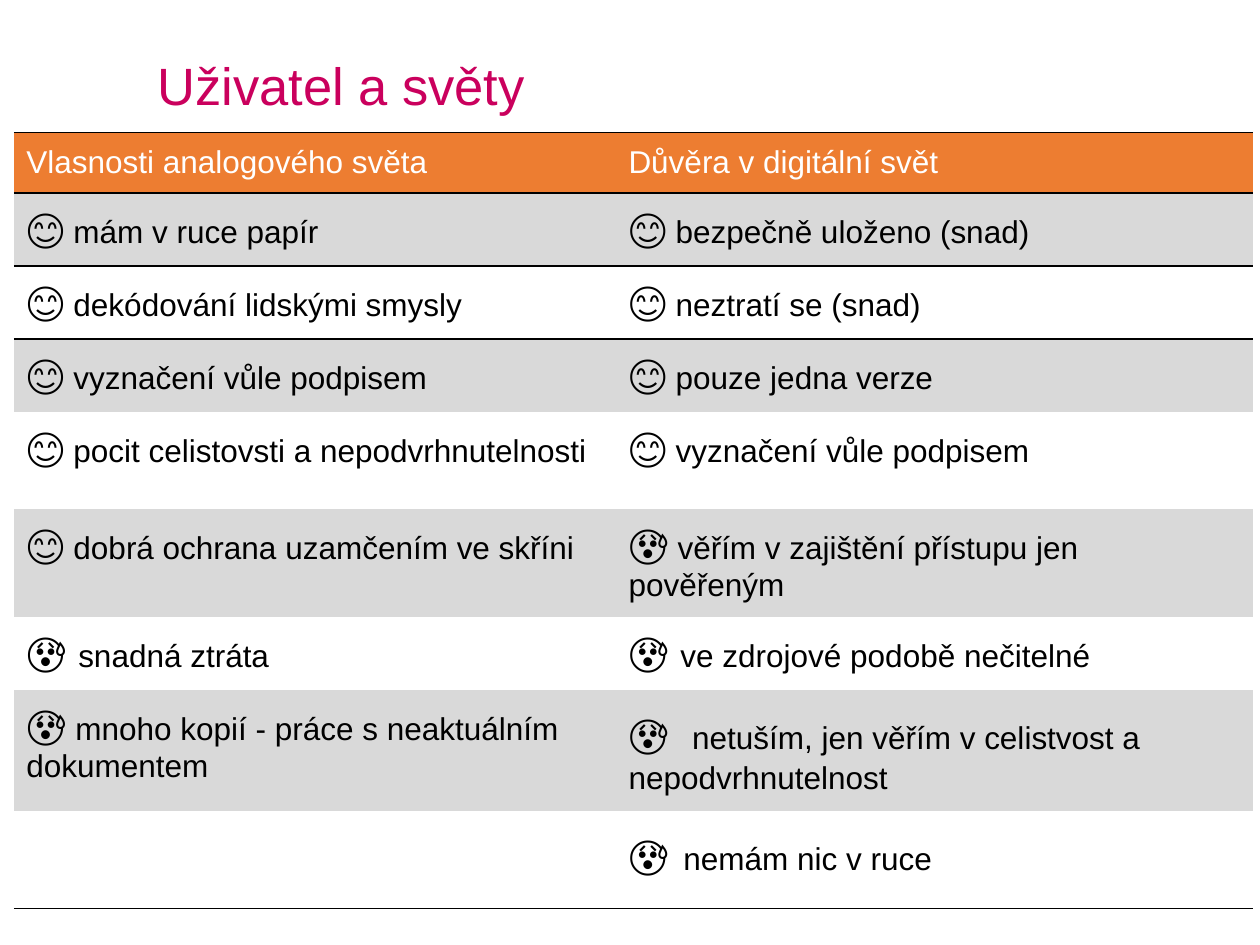
from dataclasses import dataclass
from typing import Optional

import pptx
import pptx.dml.color
import pptx.enum.text
import pptx.oxml
import pptx.oxml.ns
import pptx.util

Cm = pptx.util.Cm
HAPPY, WORRIED = "😊", "😰"
NO_STYLE = "{2D5ABB26-0587-4C30-8999-92F81FD0307C}"


@dataclass(frozen=True)
class Theme:
    """Colours, font and type sizes of the slide."""
    font: str = "Arial"
    title: str = "CA005D"
    header: str = "ED7D31"
    header_text: str = "FFFFFF"
    band: str = "D9D9D9"
    ink: str = "000000"
    title_size: int = 30
    face_size: int = 24
    body_size: int = 18


@dataclass(frozen=True)
class Entry:
    """A face and a statement, parted by spaces of the given sizes."""
    face: str
    text: str
    gaps: tuple[int, ...] = (18,)


@dataclass(frozen=True)
class Row:
    """A table row with its height in centimetres."""
    height: float
    left: Optional[Entry]
    right: Entry


T = Theme()
HEADERS = ("Vlasnosti analogového světa", "Důvěra v digitální svět")
HEADER_HEIGHT = 1.22
COLUMNS = (12.14, 12.83)
ROWS = (
    Row(1.47, Entry(HAPPY, "mám v ruce papír"), Entry(HAPPY, "bezpečně uloženo (snad)")),
    Row(1.47, Entry(HAPPY, "dekódování lidskými smysly"), Entry(HAPPY, "neztratí se (snad)")),
    Row(1.47, Entry(HAPPY, "vyznačení vůle podpisem"), Entry(HAPPY, "pouze jedna verze")),
    Row(1.96, Entry(HAPPY, "pocit celistovsti a nepodvrhnutelnosti"),
        Entry(HAPPY, "vyznačení vůle podpisem")),
    Row(2.18, Entry(HAPPY, "dobrá ochrana uzamčením ve skříni"),
        Entry(WORRIED, "věřím v zajištění přístupu jen pověřeným")),
    Row(1.47, Entry(WORRIED, "snadná ztráta", (24,)),
        Entry(WORRIED, "ve zdrojové podobě nečitelné", (24,))),
    Row(2.44, Entry(WORRIED, "mnoho kopií - práce s neaktuálním dokumentem"),
        Entry(WORRIED, "netuším, jen věřím v celistvost a nepodvrhnutelnost", (18, 30))),
    Row(1.96, None, Entry(WORRIED, "nemám nic v ruce", (30,))),
)


def rgb(value: str) -> pptx.dml.color.RGBColor:
    """Turn a hex string into a colour."""
    return pptx.dml.color.RGBColor.from_string(value)


def add_text(p, text: str, *, size: int = T.body_size, color: str = T.ink) -> None:
    """Append a formatted run to a paragraph."""
    r = p.add_run()
    r.text = text
    r.font.name = T.font
    r.font.size = pptx.util.Pt(size)
    r.font.color.rgb = rgb(color)


def set_margins(box) -> None:
    """Give a cell or text frame equal margins."""
    box.margin_left = box.margin_right = Cm(0.25)
    box.margin_top = box.margin_bottom = Cm(0.25)


def add_border(cell, side: str) -> None:
    """Rule one side of a cell, T or B."""
    cell._tc.get_or_add_tcPr().append(pptx.oxml.parse_xml(
        f'<a:ln{side} {pptx.oxml.ns.nsdecls("a")} w="12700"><a:solidFill>'
        f'<a:srgbClr val="{T.ink}"/></a:solidFill></a:ln{side}>'))


def format_cell(cell, fill: Optional[str], sides: str) -> None:
    """Set the margins, rules and fill of a cell."""
    set_margins(cell)
    for side in sides:
        add_border(cell, side)
    if fill:
        cell.fill.solid()
        cell.fill.fore_color.rgb = rgb(fill)
    else:
        cell.fill.background()


def add_entry(p, entry: Entry) -> None:
    """Write a face, its gaps and its statement."""
    add_text(p, entry.face, size=T.face_size)
    for size in entry.gaps:
        add_text(p, " ", size=size)
    add_text(p, entry.text)


def add_title(s, text: str) -> None:
    """Place and format the title."""
    sp = s.shapes.title
    sp.left, sp.top, sp.width, sp.height = Cm(2.92), Cm(0.56), Cm(21.62), Cm(2.29)
    tf = sp.text_frame
    set_margins(tf)
    tf.vertical_anchor = pptx.enum.text.MSO_ANCHOR.MIDDLE
    p = tf.paragraphs[0]
    p.alignment = pptx.enum.text.PP_ALIGN.LEFT
    add_text(p, text, size=T.title_size, color=T.title)


def add_comparison(s) -> None:
    """Draw the table comparing both worlds."""
    heights = [HEADER_HEIGHT] + [row.height for row in ROWS]
    table = s.shapes.add_table(len(heights), len(COLUMNS), Cm(0.28), Cm(2.67),
                               Cm(sum(COLUMNS)), Cm(sum(heights))).table
    table._tbl.tblPr.find(pptx.oxml.ns.qn("a:tableStyleId")).text = NO_STYLE
    table.horz_banding = False
    for column, width in zip(table.columns, COLUMNS):
        column.width = Cm(width)
    for row, height in zip(table.rows, heights):
        row.height = Cm(height)
    for j, text in enumerate(HEADERS):
        cell = table.cell(0, j)
        format_cell(cell, T.header, "TB")
        add_text(cell.text_frame.paragraphs[0], text, color=T.header_text)
    for i, row in enumerate(ROWS, 1):
        sides = {1: "TB", 2: "T", len(ROWS): "B"}.get(i, "")
        for j, entry in enumerate((row.left, row.right)):
            cell = table.cell(i, j)
            format_cell(cell, T.band if i % 2 else None, sides)
            if entry:
                add_entry(cell.text_frame.paragraphs[0], entry)


def main() -> None:
    """Build and save the slide."""
    prs = pptx.Presentation()
    prs.slide_width, prs.slide_height = Cm(25.4), Cm(19.05)
    s = prs.slides.add_slide(prs.slide_layouts[5])
    add_title(s, "Uživatel a světy")
    add_comparison(s)
    prs.save("out.pptx")


if __name__ == "__main__":
    main()
